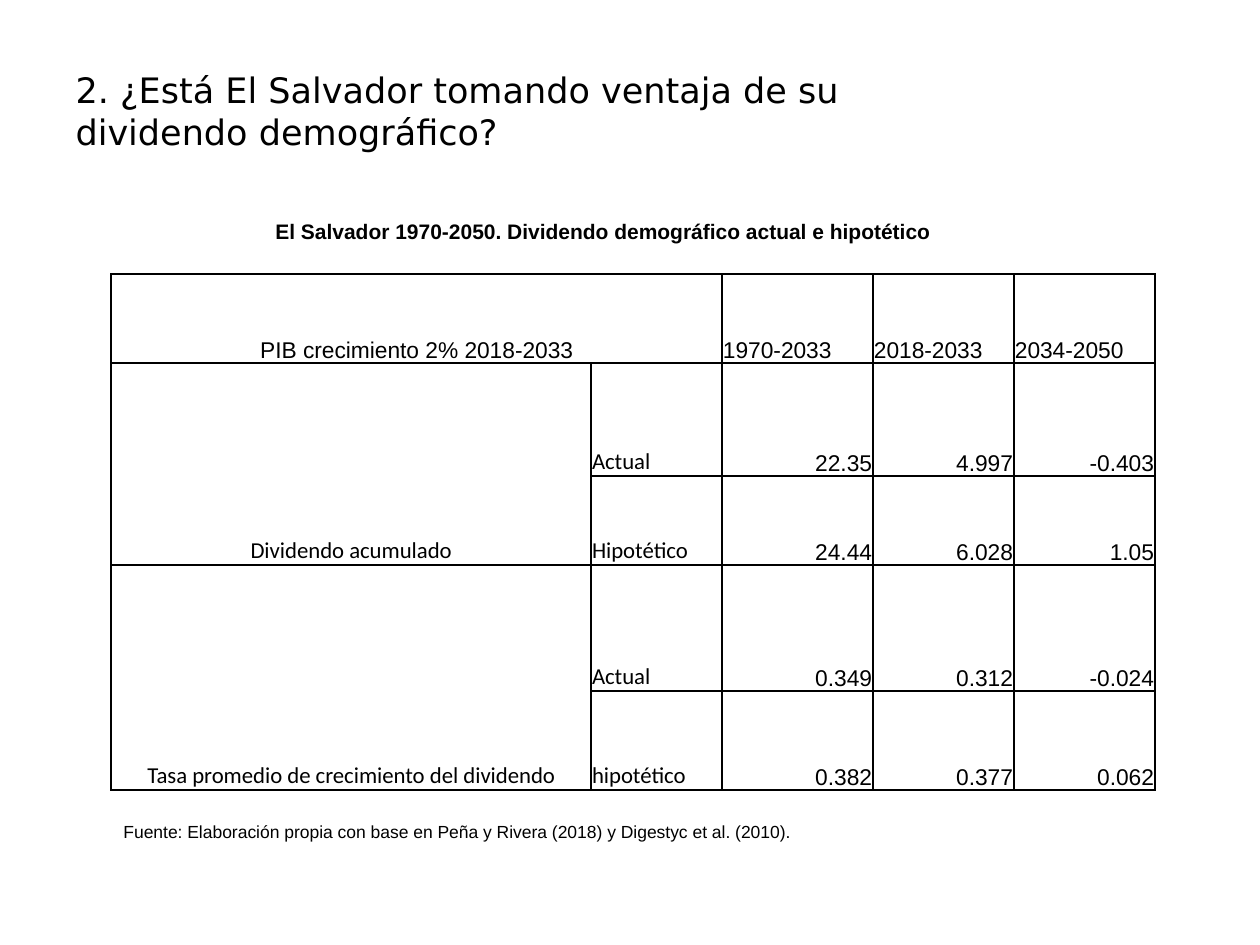
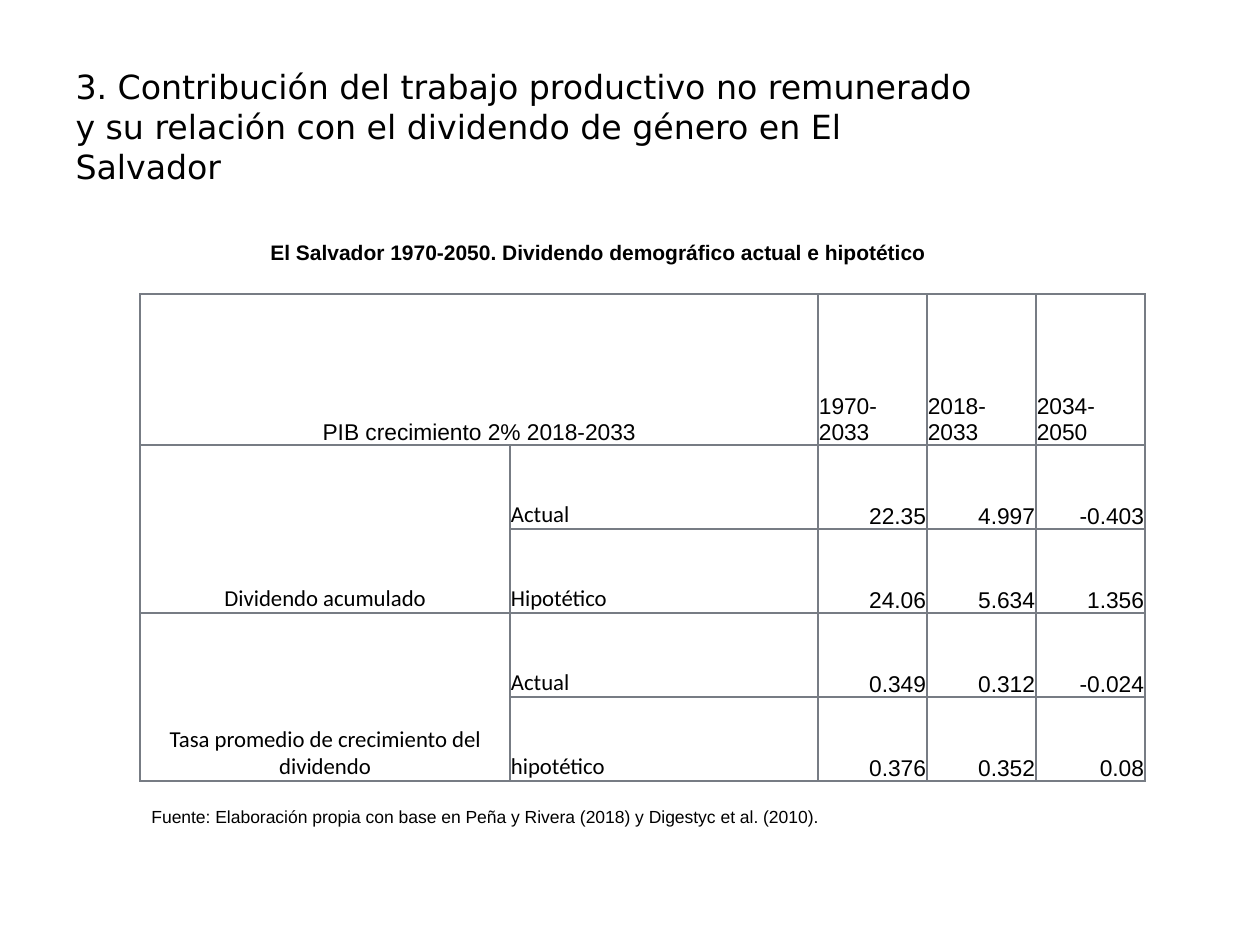
from lxml.etree import SubElement
from pptx import Presentation
from pptx.dml.color import RGBColor
from pptx.enum.text import MSO_ANCHOR as ANCHOR, MSO_AUTO_SIZE as AUTO, PP_ALIGN as ALIGN
from pptx.oxml.ns import qn
from pptx.util import Emu, Pt

PX = 914400 / 126
COLORS = {"text": "000000", "black_grid": "000000", "gray_grid": "777C84"}
TITLE_FONT, SANS, LABEL_FONT = "DejaVu Sans", "Arial", "Calibri"
CAPTION = "El Salvador 1970-2050. Dividendo demográfico actual e hipotético"
SOURCE = "Fuente: Elaboración propia con base en Peña y Rivera (2018) y Digestyc et al. (2010)."
HEADER = ["PIB crecimiento 2% 2018-2033", "", "1970-2033", "2018-2033", "2034-2050"]
ACCUMULATED = ["22.35", "4.997", "-0.403"]
GROWTH = ["0.349", "0.312", "-0.024"]


def px(n):
    """Turn pixels into EMU."""
    return Emu(round(n * PX))


def write(tf, text, size, font=SANS, bold=False, align=ALIGN.LEFT):
    """Put formatted text in a text frame."""
    tf.word_wrap = True
    tf.text = text
    p = tf.paragraphs[0]
    p.alignment = align
    for r in p.runs:
        r.font.size, r.font.name, r.font.bold = Pt(size), font, bold
        r.font.color.rgb = RGBColor.from_string(COLORS["text"])


def add_title(s, text, box, size):
    """Place and format the title placeholder."""
    sp = s.shapes.title
    sp.left, sp.top, sp.width, sp.height = map(px, box)
    sp.text_frame.auto_size = AUTO.NONE
    sp.text_frame.vertical_anchor = ANCHOR.MIDDLE
    write(sp.text_frame, text, size, font=TITLE_FONT)


def add_note(s, text, box, size, bold=False):
    """Add a caption or source line."""
    sp = s.shapes.add_textbox(*map(px, box))
    write(sp.text_frame, text, size, bold=bold)


def set_borders(cell, color):
    """Draw a one-point border on every side of a cell."""
    tc_pr = cell._tc.get_or_add_tcPr()
    for i, side in enumerate(("a:lnL", "a:lnR", "a:lnT", "a:lnB")):
        ln = SubElement(tc_pr, qn(side), w=str(Pt(1)))
        fill = SubElement(ln, qn("a:solidFill"))
        SubElement(fill, qn("a:srgbClr"), val=COLORS[color])
        tc_pr.insert(i, ln)


def format_cell(cell, text, row, col, grid):
    """Fill in one table cell by its place in the table."""
    cell.fill.background()
    set_borders(cell, grid)
    cell.vertical_anchor = ANCHOR.BOTTOM
    cell.margin_left = cell.margin_right = cell.margin_top = px(1)
    cell.margin_bottom = 0
    if not text:
        return
    if col == 0:
        align = ALIGN.CENTER
    else:
        align = ALIGN.RIGHT if row and col > 1 else ALIGN.LEFT
    font = LABEL_FONT if row and col < 2 else SANS
    write(cell.text_frame, text, 13, font=font, align=align)


def add_dividend_table(s, left, top, widths, heights, accumulated, growth, grid):
    """Add the table of actual and hypothetical dividends."""
    rows = [
        HEADER,
        ["Dividendo acumulado", "Actual", *ACCUMULATED],
        ["", "Hipotético", *accumulated],
        ["Tasa promedio de crecimiento del dividendo", "Actual", *GROWTH],
        ["", "hipotético", *growth],
    ]
    frame = s.shapes.add_table(len(rows), len(HEADER), px(left), px(top),
                               px(sum(widths)), px(sum(heights)))
    table = frame.table
    table.first_row = table.horz_banding = False
    for column, width in zip(table.columns, widths):
        column.width = px(width)
    for i, (row, height) in enumerate(zip(rows, heights)):
        table.rows[i].height = px(height)
        for j, text in enumerate(row):
            format_cell(table.cell(i, j), text, i, j, grid)
    table.cell(0, 0).merge(table.cell(0, 1))
    for i in (1, 3):
        table.cell(i, 0).merge(table.cell(i + 1, 0))


def add_dividend_slide(prs, title, title_box, title_size, caption_at, source_at, **table):
    """Build a slide with title, caption, table and source line."""
    s = prs.slides.add_slide(prs.slide_layouts[5])
    add_title(s, title, title_box, title_size)
    add_dividend_table(s, **table)
    add_note(s, CAPTION, (*caption_at, 770, 38), 12, bold=True)
    add_note(s, SOURCE, (*source_at, 863, 34), 10)


def main():
    """Build and save the presentation."""
    prs = Presentation()
    prs.slide_width, prs.slide_height = px(1260), px(945)
    add_dividend_slide(
        prs, "2. ¿Está El Salvador tomando ventaja de su\vdividendo demográfico?",
        (63, 42, 1134, 136), 20, caption_at=(263, 212), source_at=(111, 815),
        left=111, top=274, widths=[480, 131, 151, 141, 141],
        heights=[89, 113, 89, 126, 99], grid="black_grid",
        accumulated=["24.44", "6.028", "1.05"], growth=["0.382", "0.377", "0.062"])
    add_dividend_slide(
        prs, "3. Contribución del trabajo productivo no remunerado y su relación "
        "con el dividendo de género en El Salvador",
        (63, 42, 944, 168), 19, caption_at=(258, 233), source_at=(139, 800),
        left=140, top=294, widths=[370, 308] + [109] * 3,
        heights=[151] + [84] * 4, grid="gray_grid",
        accumulated=["24.06", "5.634", "1.356"], growth=["0.376", "0.352", "0.08"])
    prs.save("out.pptx")


if __name__ == "__main__":
    main()
